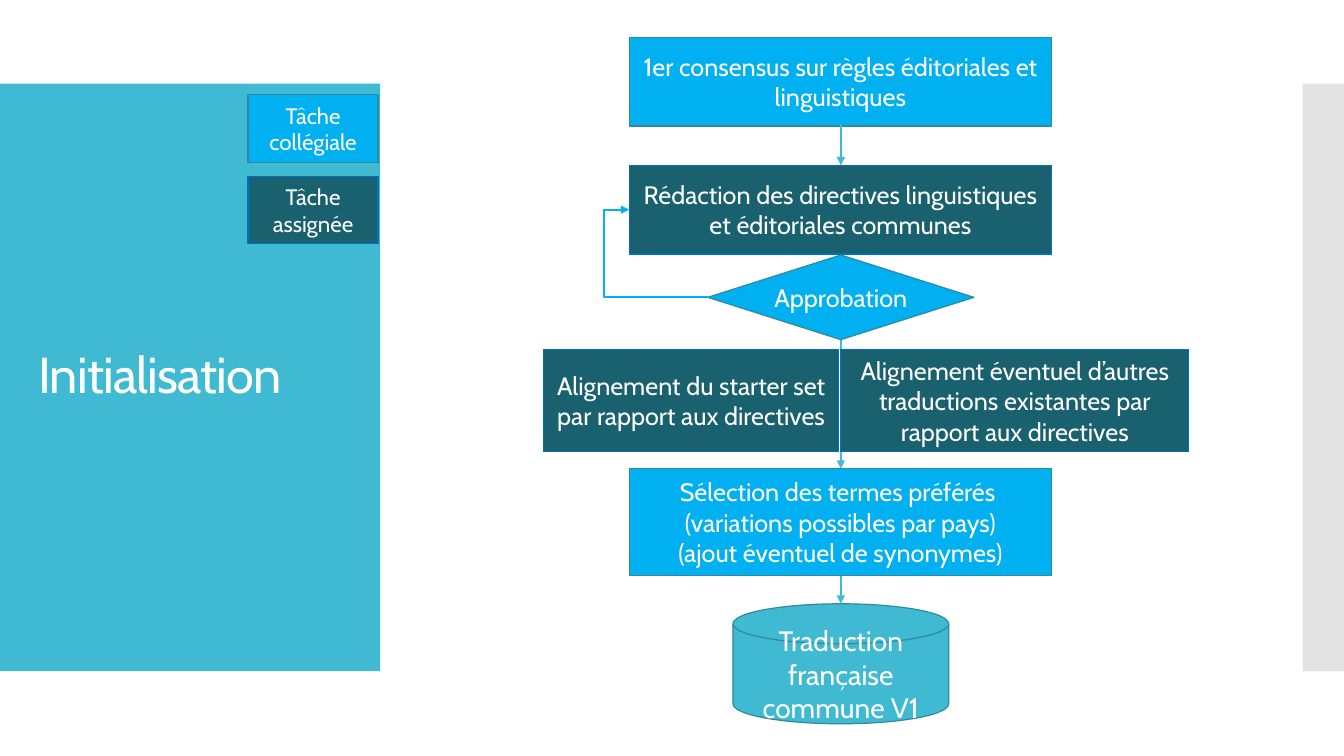
"""Build the slide that charts the start of the French translation work."""
from dataclasses import dataclass

from lxml.etree import SubElement
from pptx import Presentation
from pptx.dml.color import RGBColor
from pptx.enum.shapes import MSO_CONNECTOR, MSO_SHAPE
from pptx.enum.text import MSO_ANCHOR, MSO_AUTO_SIZE, PP_ALIGN
from pptx.oxml.ns import qn
from pptx.shapes.autoshape import Shape
from pptx.shapes.connector import Connector
from pptx.slide import Slide
from pptx.text.text import TextFrame
from pptx.util import Inches, Pt

WHITE = RGBColor(0xFF, 0xFF, 0xFF)
TEAL = RGBColor(0x40, 0xBA, 0xD2)
GREY = RGBColor(0xC8, 0xC8, 0xC8)
SKY = RGBColor(0x00, 0xB0, 0xF0)
DEEP = RGBColor(0x1A, 0x61, 0x6F)
NAVY = RGBColor(0x00, 0x70, 0xC0)
EDGE = RGBColor(0x2F, 0x8A, 0x9B)
FONT = "Cabin"
AXIS = 8.34


@dataclass(frozen=True)
class Look:
    """Fill, outline and side inset of a kind of task."""
    fill: RGBColor
    line: RGBColor
    inset: float


@dataclass(frozen=True)
class Node:
    """A box of the flow or of its key."""
    left: float
    top: float
    width: float
    height: float
    look: Look
    lines: tuple[str, ...]
    size: int = 18
    form: MSO_SHAPE = MSO_SHAPE.RECTANGLE


@dataclass(frozen=True)
class Link:
    """An arrow between two points."""
    start: tuple[float, float]
    end: tuple[float, float]
    color: RGBColor = TEAL
    kind: MSO_CONNECTOR = MSO_CONNECTOR.STRAIGHT


GROUP = Look(SKY, EDGE, 0)
SOLO = Look(DEEP, NAVY, 0.1)
STORE = Look(TEAL, EDGE, 0.1)

WIDE = 4.19
MAIN = 6.24
KEY = 2.46

NODES = (
    Node(MAIN, 1.64, WIDE, 0.88, SOLO,
         ("Rédaction des directives linguistiques et éditoriales communes",)),
    Node(7.02, 2.53, 2.64, 0.84, GROUP, ("Approbation",), form=MSO_SHAPE.DIAMOND),
    Node(5.39, 3.47, 2.93, 1.01, SOLO,
         ("Alignement du starter set par rapport aux directives",)),
    Node(MAIN, 0.37, WIDE, 0.88, GROUP,
         ("1er consensus sur règles éditoriales et linguistiques",)),
    Node(KEY, 0.94, 1.29, 0.67, GROUP, ("Tâche collégiale",), 16),
    Node(KEY, 1.75, 1.29, 0.67, SOLO, ("Tâche assignée",), 16),
    Node(MAIN, 4.65, WIDE, 1.06, GROUP,
         ("Sélection des termes préférés ",
          "(variations possibles par pays)",
          "(ajout éventuel de synonymes)")),
    Node(7.27, 5.99, 2.14, 1.19, STORE, ("Traduction française commune V1",), 20,
         MSO_SHAPE.FLOWCHART_MAGNETIC_DISK),
)
LAST = Node(AXIS, 3.47, 3.45, 1.01, SOLO,
            ("Alignement éventuel d’autres traductions existantes par rapport "
             "aux directives",))
DROPS = ((1.24, 1.64), (3.37, 4.65), (5.71, 5.99))
LOOP = Link((7.02, 2.95), (MAIN, 2.08), SKY, MSO_CONNECTOR.ELBOW)
LINKS = (LOOP, *(Link((AXIS, top), (AXIS, low)) for top, low in DROPS))


def write(frame: TextFrame, lines: tuple[str, ...], size: int, align: PP_ALIGN) -> None:
    """Fill a frame with one paragraph per line."""
    frame.word_wrap = True
    frame.auto_size = MSO_AUTO_SIZE.NONE
    frame.vertical_anchor = MSO_ANCHOR.MIDDLE
    for rank, line in enumerate(lines):
        para = frame.add_paragraph() if rank else frame.paragraphs[0]
        para.alignment = align
        run = para.add_run()
        run.text = line
        run.font.name = FONT
        run.font.size = Pt(size)
        run.font.color.rgb = WHITE


def block(slide: Slide, form: MSO_SHAPE, box: tuple[float, ...], fill: RGBColor) -> Shape:
    """Add a flat filled shape without outline."""
    shape = slide.shapes.add_shape(form, *map(Inches, box))
    shape.shadow.inherit = False
    shape.fill.solid()
    shape.fill.fore_color.rgb = fill
    shape.line.fill.background()
    return shape


def draw(slide: Slide, node: Node) -> None:
    """Add an outlined box with its text."""
    box = (node.left, node.top, node.width, node.height)
    shape = block(slide, node.form, box, node.look.fill)
    shape.line.color.rgb = node.look.line
    shape.line.width = Pt(0.85)
    frame = shape.text_frame
    frame.margin_left = frame.margin_right = Inches(node.look.inset)
    write(frame, node.lines, node.size, PP_ALIGN.CENTER)


def join(slide: Slide, link: Link) -> Connector:
    """Add a line that ends in an arrowhead."""
    wire = slide.shapes.add_connector(
        link.kind, *map(Inches, (*link.start, *link.end)))
    wire.line.color.rgb = link.color
    wire.line.width = Pt(1.5)
    props = wire._element.spPr
    SubElement(props.find(qn("a:ln")), qn("a:tailEnd"), type="triangle")
    SubElement(props, qn("a:effectLst"))
    if link.kind == MSO_CONNECTOR.ELBOW:
        guides = props.find(qn("a:prstGeom")).find(qn("a:avLst"))
        SubElement(guides, qn("a:gd"), name="adj1", fmla="val 132200")
    return wire


def head(slide: Slide) -> None:
    """Draw the side panels and set the title on the left one."""
    block(slide, MSO_SHAPE.RECTANGLE, (0, 0.83, 3.77, 5.83), TEAL)
    strip = block(slide, MSO_SHAPE.RECTANGLE, (12.92, 0.83, 0.41, 5.83), GREY)
    tint = next(strip._element.spPr.iter(qn("a:srgbClr")))
    SubElement(tint, qn("a:alpha"), val="50000")
    title = slide.shapes.title
    title.left, title.top, title.width, title.height = map(
        Inches, (0.28, 1.23, 3.22, 5.03))
    write(title.text_frame, ("Initialisation",), 36, PP_ALIGN.LEFT)
    para = title.text_frame.paragraphs[0]
    para.line_spacing = 0.9
    para.runs[0].font._element.set("spc", "-60")
    slide.shapes._spTree.append(title._element)


def main() -> None:
    """Build and save the deck."""
    deck = Presentation()
    deck.slide_width, deck.slide_height = Inches(13.33), Inches(7.5)
    slide = deck.slides.add_slide(deck.slide_layouts[5])
    head(slide)
    for node in NODES:
        draw(slide, node)
    for link in LINKS:
        join(slide, link)
    draw(slide, LAST)
    deck.save("out.pptx")


if __name__ == "__main__":
    main()
